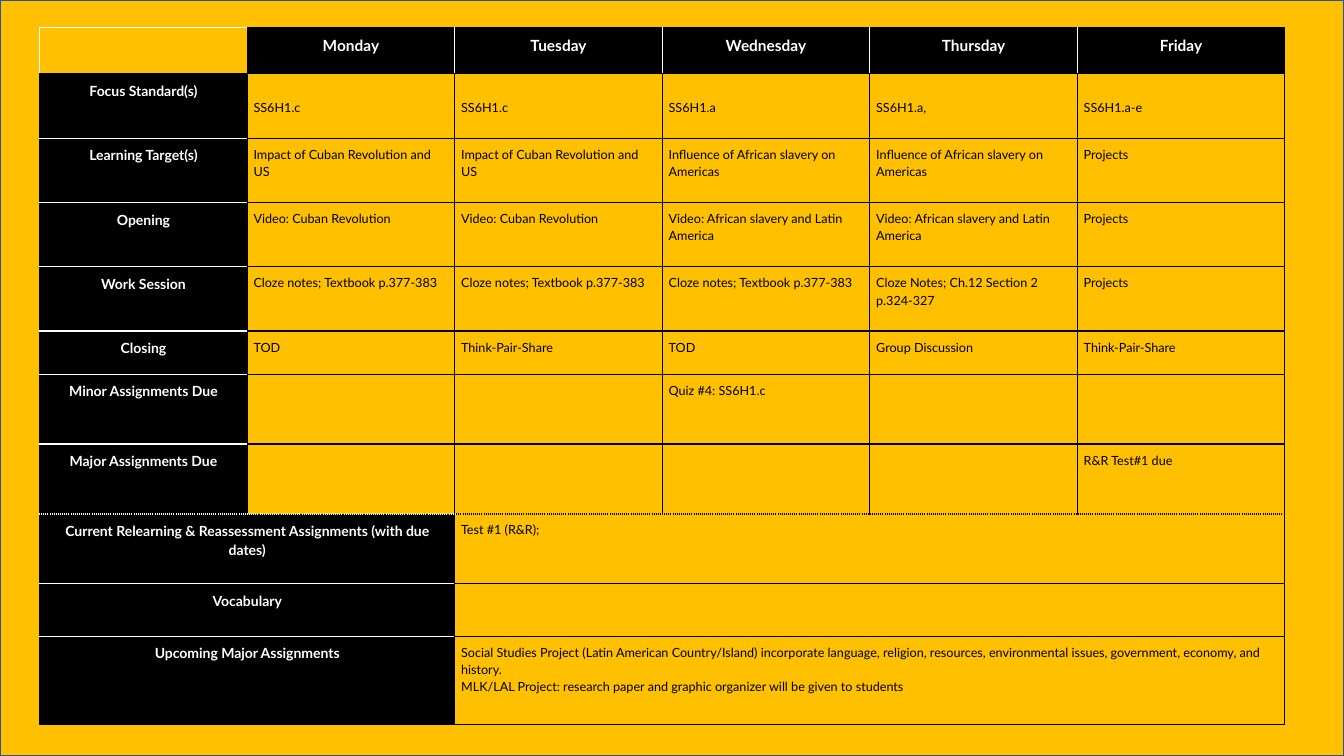
from lxml import etree
from pptx import Presentation
from pptx.dml.color import RGBColor
from pptx.enum.shapes import MSO_SHAPE
from pptx.enum.text import PP_ALIGN
from pptx.oxml.ns import qn
from pptx.util import Cm, Pt

RECTANGLE = MSO_SHAPE.RECTANGLE
CENTER, LEFT = PP_ALIGN.CENTER, PP_ALIGN.LEFT

COLORS = {"gold": "FFC000", "navy": "325491", "black": "000000", "white": "FFFFFF"}
FONT = "Lato"

DAYS = ["", "Monday", "Tuesday", "Wednesday", "Thursday", "Friday"]
DAILY = [
    ["Focus Standard(s)", "SS6H1.c", "SS6H1.c", "SS6H1.a", "SS6H1.a,", "SS6H1.a-e"],
    ["Learning Target(s)",
     "Impact of Cuban Revolution and US", "Impact of Cuban Revolution and US",
     "Influence of African slavery on Americas",
     "Influence of African slavery on Americas", "Projects"],
    ["Opening", "Video: Cuban Revolution", "Video: Cuban Revolution",
     "Video: African slavery and Latin America",
     "Video: African slavery and Latin America", "Projects"],
    ["Work Session", "Cloze notes; Textbook p.377-383",
     "Cloze notes; Textbook p.377-383", "Cloze notes; Textbook p.377-383",
     "Cloze Notes; Ch.12 Section 2 p.324-327", "Projects"],
    ["Closing", "TOD", "Think-Pair-Share", "TOD", "Group Discussion",
     "Think-Pair-Share"],
    ["Minor Assignments Due", "", "", "Quiz #4: SS6H1.c", "", ""],
    ["Major Assignments Due", "", "", "", "", "R&R Test#1 due"],
]
WEEKLY = [
    ("Current Relearning & Reassessment Assignments (with due dates)",
     "Test #1 (R&R);"),
    ("Vocabulary", ""),
    ("Upcoming Major Assignments",
     "Social Studies Project (Latin American Country/Island) incorporate language, "
     "religion, resources, environmental issues, government, economy, and history.\n"
     "MLK/LAL Project: research paper and graphic organizer will be given to students"),
]
ROWS = [DAYS] + DAILY + [[label, "", text, "", "", ""] for label, text in WEEKLY]

LAST_ROW, LAST_COL = len(ROWS) - 1, len(DAYS) - 1
FIRST_WEEKLY = 1 + len(DAILY)
TABLE_LEFT, TABLE_TOP, COL_WIDTH = 1, 0.69, 5.23
ROW_HEIGHTS = [1.17, 1.62, 1.62, 1.62, 1.62, 1.09, 1.76, 1.76, 1.76, 1.32, 2.22]
PAD, STANDARD_TOP_PAD = 0.16, 0.6

HEADER = {"size": Pt(11), "bold": True, "color": "white", "align": CENTER}
LABEL = {**HEADER, "size": Pt(10)}
ENTRY = {"size": Pt(9), "bold": False, "color": "black", "align": LEFT}


def rgb(name):
    return RGBColor.from_string(COLORS[name])


def is_label(row, col):
    return row > 0 and col < (2 if row >= FIRST_WEEKLY else 1)


def white_sides(row, col):
    """Sides of a cell whose border is white instead of black."""
    if row == 0:
        if col == 0:
            return "LT"
        return ("L" if col > 1 else "") + ("R" if col < LAST_COL else "")
    if is_label(row, col):
        return ("T" if row > 1 else "") + ("B" if row < LAST_ROW else "")
    return ""


def set_borders(cell, row, col):
    tc_pr = cell._tc.get_or_add_tcPr()
    whites = white_sides(row, col)
    for side in "LRTB":
        dotted = (row, side) in ((FIRST_WEEKLY - 1, "B"), (FIRST_WEEKLY, "T"))
        ln = etree.SubElement(tc_pr, qn(f"a:ln{side}"), w=str(Pt(2.25 if dotted else 1)))
        fill = etree.SubElement(ln, qn("a:solidFill"))
        color = COLORS["white" if side in whites else "black"]
        etree.SubElement(fill, qn("a:srgbClr"), val=color)
        etree.SubElement(ln, qn("a:prstDash"), val="dot" if dotted else "solid")


def set_text(cell, text, style):
    tf = cell.text_frame
    tf.text = text
    for p in tf.paragraphs:
        p.alignment, p.line_spacing = style["align"], 1.15
        for r in p.runs:
            r.font.name = FONT
            r.font.color.rgb = rgb(style["color"])
            for name in ("size", "bold"):
                setattr(r.font, name, style[name])


def fill_cell(cell, row, col):
    set_borders(cell, row, col)
    label, header = is_label(row, col), row == 0 and col > 0
    if label or header:
        cell.fill.solid()
        cell.fill.fore_color.rgb = rgb("black")
    else:
        cell.fill.background()
    for side in ("left", "right", "top", "bottom"):
        setattr(cell, f"margin_{side}", Cm(PAD))
    if row == 1 and not label:
        cell.margin_top = Cm(STANDARD_TOP_PAD)
    if ROWS[row][col]:
        set_text(cell, ROWS[row][col], HEADER if header else LABEL if label else ENTRY)


def add_background(slide, width, height):
    sp = slide.shapes.add_shape(RECTANGLE, 0, 0, width, height)
    sp.shadow.inherit = False
    sp.fill.solid()
    sp.fill.fore_color.rgb = rgb("gold")
    sp.line.color.rgb = rgb("navy")
    sp.line.width = Pt(1)


def add_planner(slide):
    table = slide.shapes.add_table(
        len(ROWS), len(DAYS), Cm(TABLE_LEFT), Cm(TABLE_TOP),
        Cm(COL_WIDTH * len(DAYS)), Cm(sum(ROW_HEIGHTS))).table
    table.first_row = table.horz_banding = False
    for column in table.columns:
        column.width = Cm(COL_WIDTH)
    for row, height in enumerate(ROW_HEIGHTS):
        table.rows[row].height = Cm(height)
        for col in range(len(DAYS)):
            fill_cell(table.cell(row, col), row, col)
    for row in range(FIRST_WEEKLY, len(ROWS)):
        table.cell(row, 0).merge(table.cell(row, 1))
        table.cell(row, 2).merge(table.cell(row, LAST_COL))


def main():
    prs = Presentation()
    prs.slide_width, prs.slide_height = Cm(33.87), Cm(19.05)
    slide = prs.slides.add_slide(prs.slide_layouts[6])
    add_background(slide, prs.slide_width, prs.slide_height)
    add_planner(slide)
    prs.save("out.pptx")


if __name__ == "__main__":
    main()
